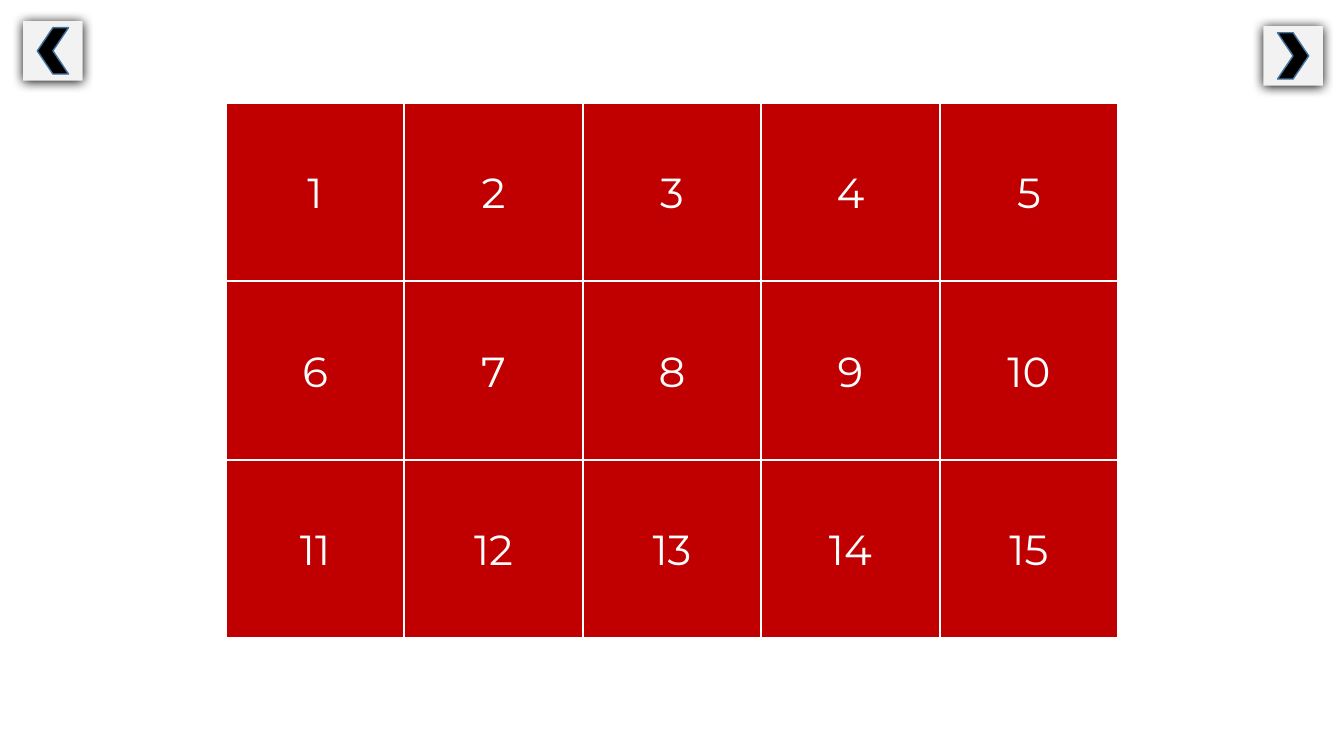
from lxml import etree
from pptx import Presentation
from pptx.dml.color import RGBColor
from pptx.enum.shapes import MSO_SHAPE
from pptx.enum.text import MSO_ANCHOR, PP_ALIGN
from pptx.oxml.ns import qn
from pptx.util import Inches, Pt

RECTANGLE, CHEVRON = MSO_SHAPE.RECTANGLE, MSO_SHAPE.CHEVRON
CENTER, MIDDLE = PP_ALIGN.CENTER, MSO_ANCHOR.MIDDLE

COLORS = {
    "tile": "C00000",
    "white": "FFFFFF",
    "button": "F2F2F2",
    "arrow": "000000",
    "arrow_edge": "43739E",
    "shadow": "000000",
}
NUMBER_FORMAT = {"name": "Montserrat", "size": Pt(30)}

# Number grid, in inches
COLUMNS, ROWS = 5, 3
GRID_LEFT, GRID_TOP, TILE = 2.24, 1.02, 1.77

# Navigation buttons, in inches
BUTTON = 0.59
ARROW_WIDTH, ARROW_HEIGHT = 0.31, 0.46


def color(key):
    return RGBColor.from_string(COLORS[key])


def add_filled(shapes, kind, box, fill, edge=None, edge_width=1):
    """Add a flat preset shape, outlined only if an edge colour is given."""
    shape = shapes.add_shape(kind, *(Inches(length) for length in box))
    shape.shadow.inherit = False
    shape.fill.solid()
    shape.fill.fore_color.rgb = color(fill)
    if edge:
        shape.line.color.rgb = color(edge)
        shape.line.width = Pt(edge_width)
    else:
        shape.line.fill.background()
    return shape


def add_soft_shadow(shape):
    effects = shape._element.spPr.find(qn("a:effectLst"))
    shadow = etree.SubElement(
        effects, qn("a:outerShdw"), blurRad=str(Pt(8.5)), dist=str(Pt(1)),
        dir=str(90 * 60000), algn="t", rotWithShape="0")
    etree.SubElement(shadow, qn("a:srgbClr"), val=COLORS["shadow"])


def add_nav_button(slide, left, top, backward=False):
    """Group a shadowed square with a centred chevron."""
    group = slide.shapes.add_group_shape()
    square = add_filled(group.shapes, RECTANGLE,
                        (left, top, BUTTON, BUTTON), "button")
    add_soft_shadow(square)
    arrow_box = (left + (BUTTON - ARROW_WIDTH) / 2,
                 top + (BUTTON - ARROW_HEIGHT) / 2,
                 ARROW_WIDTH, ARROW_HEIGHT)
    arrow = add_filled(group.shapes, CHEVRON, arrow_box, "arrow", "arrow_edge")
    if backward:
        for part in (square, arrow):
            part._element.spPr.find(qn("a:xfrm")).set("flipH", "1")


def add_number_tile(slide, number):
    """Place a numbered tile, counting row by row from 1."""
    row, column = divmod(number - 1, COLUMNS)
    box = (GRID_LEFT + column * TILE, GRID_TOP + row * TILE, TILE, TILE)
    tile = add_filled(slide.shapes, RECTANGLE, box, "tile", "white", 1.5)
    tile.text_frame.vertical_anchor = MIDDLE
    paragraph = tile.text_frame.paragraphs[0]
    paragraph.alignment = CENTER
    label = paragraph.add_run()
    label.text = str(number)
    for attribute, value in NUMBER_FORMAT.items():
        setattr(label.font, attribute, value)
    label.font.color.rgb = color("white")


def main():
    deck = Presentation()
    deck.slide_width, deck.slide_height = Inches(13.33), Inches(7.5)
    slide = deck.slides.add_slide(deck.slide_layouts[6])
    slide.background.fill.solid()
    slide.background.fill.fore_color.rgb = color("white")

    # Next and previous buttons
    add_nav_button(slide, 12.53, 0.26)
    add_nav_button(slide, 0.23, 0.21, backward=True)

    # Numbered tiles
    for number in range(1, COLUMNS * ROWS + 1):
        add_number_tile(slide, number)

    deck.save("out.pptx")


if __name__ == "__main__":
    main()
